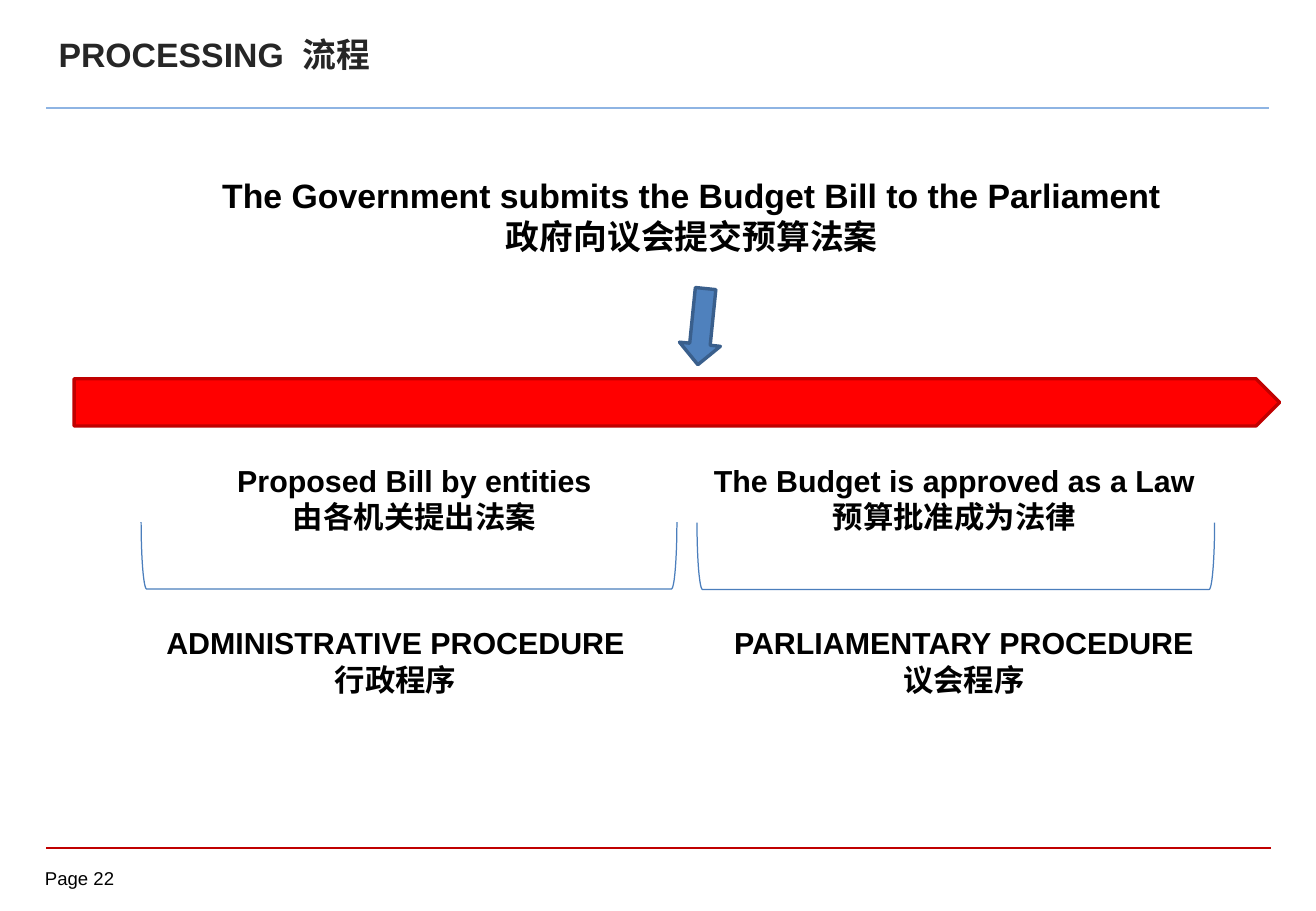
from dataclasses import dataclass

from lxml import etree
from pptx import Presentation
from pptx.dml.color import RGBColor
from pptx.enum.shapes import MSO_CONNECTOR, MSO_SHAPE
from pptx.enum.text import MSO_ANCHOR, MSO_AUTO_SIZE, PP_ALIGN
from pptx.oxml.ns import qn
from pptx.util import Cm, Pt

STRAIGHT = MSO_CONNECTOR.STRAIGHT
TIMELINE = MSO_SHAPE.PENTAGON
BRACKET = MSO_SHAPE.RIGHT_BRACKET
ARROW = MSO_SHAPE.LEFT_ARROW
LEFT, CENTER = PP_ALIGN.LEFT, PP_ALIGN.CENTER
MIDDLE = MSO_ANCHOR.MIDDLE
FIXED, GROW = MSO_AUTO_SIZE.NONE, MSO_AUTO_SIZE.SHAPE_TO_FIT_TEXT


@dataclass(frozen=True)
class Theme:
    font: str = "Arial"
    black: str = "000000"
    title_color: str = "262626"
    red: str = "FF0000"
    dark_red: str = "C00000"
    pale_blue: str = "8EB4E3"
    bracket_blue: str = "4B7EBC"
    arrow_blue: str = "4F81BD"
    arrow_edge: str = "3A5F8C"
    heading: int = 20
    label: int = 18
    footer: int = 11


class BudgetSlide:
    """Draws the elements of one slide in the given theme."""

    def __init__(self, deck, theme):
        self.theme = theme
        self.page = deck.slides.add_slide(deck.slide_layouts[5])

    def place(self, shape, left, top, width, height):
        shape.left, shape.top = Cm(left), Cm(top)
        shape.width, shape.height = Cm(width), Cm(height)

    def span(self, para, text, size, bold=True, color=None):
        span = para.add_run()
        span.text = text
        span.font.name = self.theme.font
        span.font.size = Pt(size)
        span.font.bold = bold
        span.font.color.rgb = RGBColor.from_string(color or self.theme.black)
        return span

    def title(self, english, chinese, *area):
        box = self.page.shapes.title
        self.place(box, *area)
        frame = box.text_frame
        frame.auto_size = FIXED
        frame.vertical_anchor = MIDDLE
        para = frame.paragraphs[0]
        para.alignment = LEFT
        size, color = self.theme.heading, self.theme.title_color
        self.span(para, english, size, color=color)
        gap = self.span(para, " ", size, color=color)
        gap.font._element.set("spc", "550") if hasattr(gap.font, "_element") else gap._r.get_or_add_rPr().set("spc", "550")
        self.span(para, chinese, size, color=color)

    def label(self, lines, size, *area):
        box = self.page.shapes.add_textbox(*map(Cm, area))
        frame = box.text_frame
        frame.word_wrap = True
        frame.auto_size = GROW
        for index, line in enumerate(lines):
            para = frame.add_paragraph() if index else frame.paragraphs[0]
            para.alignment = CENTER
            self.span(para, line, size)

    def footer(self, text, *area):
        frame = self.page.shapes.add_textbox(*map(Cm, area)).text_frame
        frame.margin_left = frame.margin_right = 0
        frame.margin_top = frame.margin_bottom = 0
        self.span(frame.paragraphs[0], text, self.theme.footer, bold=False)

    def rule(self, left, right, top, color, weight):
        line = self.page.shapes.add_connector(
            STRAIGHT, Cm(left), Cm(top), Cm(right), Cm(top))
        line.line.color.rgb = RGBColor.from_string(color)
        line.line.width = Pt(weight)
        etree.SubElement(line._element.spPr, qn("a:effectLst"))

    def shape(self, kind, area, edge, weight, fill=None, rotation=0):
        shape = self.page.shapes.add_shape(kind, *map(Cm, area))
        shape.shadow.inherit = False
        shape.rotation = rotation
        shape.line.color.rgb = RGBColor.from_string(edge)
        shape.line.width = Pt(weight)
        if fill:
            shape.fill.solid()
            shape.fill.fore_color.rgb = RGBColor.from_string(fill)
        else:
            shape.fill.background()


def main():
    theme = Theme()
    deck = Presentation()
    deck.slide_width, deck.slide_height = Cm(27.51), Cm(19.05)
    slide = BudgetSlide(deck, theme)

    slide.rule(0.97, 26.57, 17.73, theme.dark_red, 1)
    slide.rule(0.97, 26.52, 2.26, theme.pale_blue, 1.5)
    slide.footer("Page 22", 0.94, 18.14, 1.85, 0.56)
    slide.title("PROCESSING", "流程", 0.97, 0.23, 25.2, 1.8)

    slide.shape(TIMELINE, (1.55, 7.92, 25.2, 0.99), theme.dark_red, 2, theme.red)
    for left, top, length in ((7.85, 6.02, 11.2), (19.28, 6.22, 10.82)):
        slide.shape(BRACKET, (left, top, 1.4, length),
                    theme.bracket_blue, 0.75, rotation=90)

    slide.label(("The Government submits the Budget Bill to the Parliament",
                 "政府向议会提交预算法案"), theme.heading, 4.37, 3.53, 20.19, 1.96)
    labels = (
        ("ADMINISTRATIVE PROCEDURE", "行政程序", 2.57, 12.93, 11.4),
        ("PARLIAMENTARY PROCEDURE", "议会程序", 14.55, 12.93, 11.2),
        ("Proposed Bill by entities", "由各机关提出法案", 4.17, 9.53, 8.99),
        ("The Budget is approved as a Law", "预算批准成为法律", 14.35, 9.53, 11.2),
    )
    for english, chinese, left, top, width in labels:
        slide.label((english, chinese), theme.label, left, top, width, 1.8)

    slide.shape(ARROW, (13.87, 6.4, 1.6, 0.86), theme.arrow_edge, 2,
                theme.arrow_blue, 275.8)
    deck.save("out.pptx")


if __name__ == "__main__":
    main()
